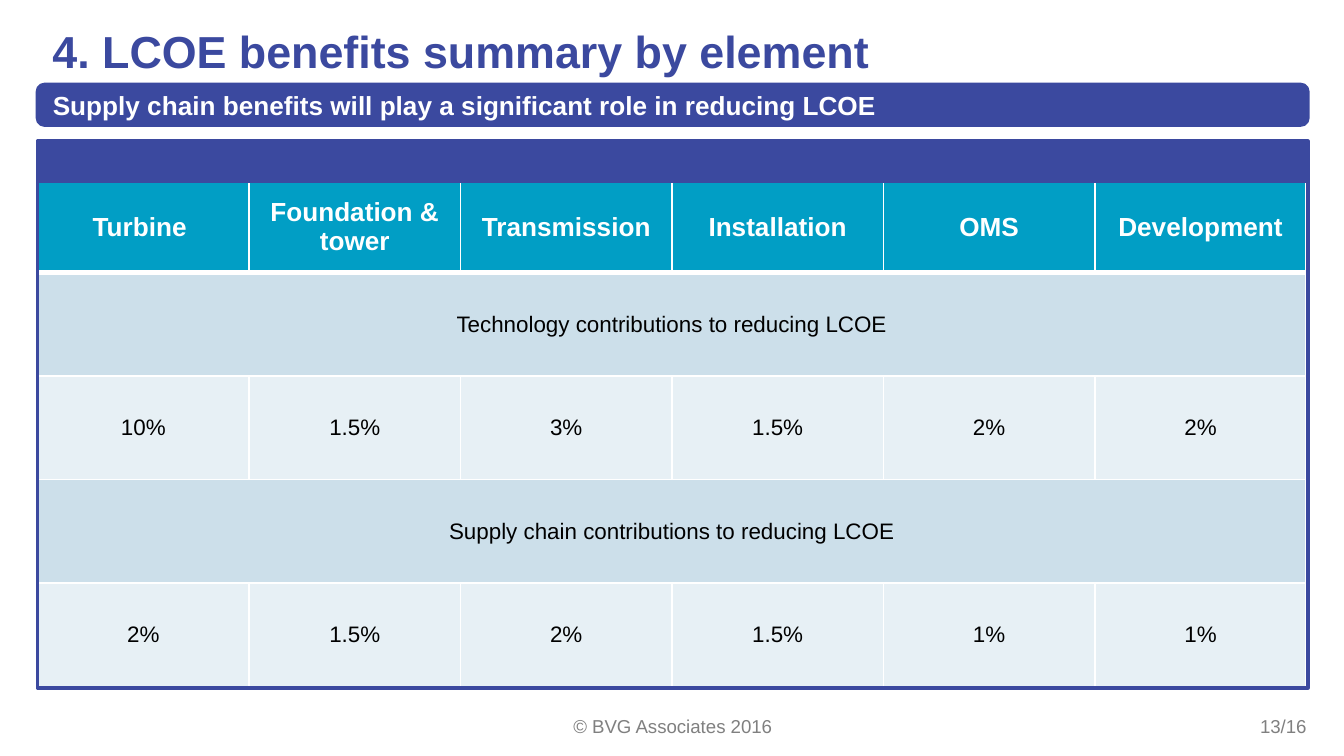
from lxml import etree
from pptx import Presentation
from pptx import util as u
from pptx.dml.color import RGBColor
from pptx.enum import shapes, text
from pptx.oxml.ns import qn

# Content
TITLE = "4. LCOE benefits summary by element"
MESSAGE = "Supply chain benefits will play a significant role in reducing LCOE"
ELEMENTS = ["Turbine ", "Foundation & tower", "Transmission", "Installation", "OMS", "Development"]
CONTRIBUTIONS = [
    ("Technology contributions to reducing LCOE", ["10%", "1.5%", "3%", "1.5%", "2%", "2%"]),
    ("Supply chain contributions to reducing LCOE", ["2%", "1.5%", "2%", "1.5%", "1%", "1%"]),
]
COPYRIGHT = "© BVG Associates 2016"
PAGE_NUMBER = "13/16"

COLOURS = {"navy": "3B499F", "teal": "019EC5", "band": "CCDFEA", "pale": "E7F0F5",
           "white": "FFFFFF", "black": "000000", "grey": "808080"}
FONT = "Arial"
LEFT, WIDTH = 0.28, 9.45
TABLE_TOP, TABLE_WIDTH = 1.35, 9.44
HEADER_HEIGHT, ROW_HEIGHT = 0.68, 0.77
BAR_HEIGHT = 0.3


def colour(name):
    return RGBColor.from_string(COLOURS[name])


def write(frame, words, size=12, ink="black", bold=False,
          align=text.PP_ALIGN.LEFT, anchor=text.MSO_ANCHOR.MIDDLE):
    frame.word_wrap = True
    frame.vertical_anchor = anchor
    paragraph = frame.paragraphs[0]
    paragraph.alignment = align
    run = paragraph.add_run()
    run.text = words
    run.font.name, run.font.size, run.font.bold = FONT, u.Pt(size), bold
    run.font.color.rgb = colour(ink)


def add_box(slide, preset, top, height, fill=None):
    shape = slide.shapes.add_shape(preset, u.Inches(LEFT), u.Inches(top),
                                   u.Inches(WIDTH), u.Inches(height))
    shape.shadow.inherit = False
    if fill:
        shape.fill.solid()
        shape.fill.fore_color.rgb = colour(fill)
    else:
        shape.fill.background()
    shape.line.color.rgb = colour("navy")
    shape.line.width = u.Pt(2)
    return shape


def add_label(slide, words, left, width, align):
    box = slide.shapes.add_textbox(u.Inches(left), u.Inches(5.25), u.Inches(width), u.Inches(0.3))
    write(box.text_frame, words, size=10, ink="grey", align=align)


def style_cell(cell, fill, bottom=1):
    properties = cell._tc.get_or_add_tcPr()
    for side, points in (("L", 1), ("R", 1), ("T", 1), ("B", bottom)):
        line = etree.SubElement(properties, qn(f"a:ln{side}"), w=str(u.Pt(points)))
        solid = etree.SubElement(line, qn("a:solidFill"))
        etree.SubElement(solid, qn("a:srgbClr"), val=COLOURS["white"])
    cell.fill.solid()
    cell.fill.fore_color.rgb = colour(fill)
    cell.vertical_anchor = text.MSO_ANCHOR.MIDDLE


def add_benefits_table(slide):
    rows = [(ELEMENTS, "teal")]
    for heading, values in CONTRIBUTIONS:
        rows += [([heading], "band"), (values, "pale")]
    height = HEADER_HEIGHT + ROW_HEIGHT * (len(rows) - 1)
    table = slide.shapes.add_table(len(rows), len(ELEMENTS), u.Inches(LEFT), u.Inches(TABLE_TOP),
                                   u.Inches(TABLE_WIDTH), u.Inches(height)).table
    for index, (entries, fill) in enumerate(rows):
        header = index == 0
        table.rows[index].height = u.Inches(HEADER_HEIGHT if header else ROW_HEIGHT)
        cells = list(table.rows[index].cells)
        for cell in cells:
            style_cell(cell, fill, bottom=3 if header else 1)
        if len(entries) == 1:
            cells[0].merge(cells[-1])
        for cell, entry in zip(cells, entries):
            write(cell.text_frame, entry, size=14 if header else 12,
                  ink="white" if header else "black", bold=header,
                  align=text.PP_ALIGN.CENTER)


def main():
    presentation = Presentation()
    # Widescreen, 16:9
    presentation.slide_width = u.Inches(10)
    presentation.slide_height = presentation.slide_width * 9 // 16
    slide = presentation.slides.add_slide(presentation.slide_layouts[5])

    # Benefits table
    add_benefits_table(slide)

    # Title
    title = slide.shapes.title
    title.left, title.top, title.width, title.height = map(u.Inches, (0.2, 0.13, 9.69, 0.35))
    title.text_frame.auto_size = text.MSO_AUTO_SIZE.NONE
    title.text_frame.margin_left = u.Inches(0.19)
    title.text_frame.margin_top = u.Inches(0.05)
    write(title.text_frame, TITLE, size=24, ink="navy", bold=True, anchor=text.MSO_ANCHOR.TOP)

    # Message bar, table frame and table cap
    message = add_box(slide, shapes.MSO_SHAPE.ROUNDED_RECTANGLE, 0.63, BAR_HEIGHT, "navy")
    write(message.text_frame, MESSAGE, size=14, ink="white", bold=True)
    add_box(slide, shapes.MSO_SHAPE.RECTANGLE, TABLE_TOP, 3.77)
    add_box(slide, shapes.MSO_SHAPE.RECTANGLE, TABLE_TOP - BAR_HEIGHT, BAR_HEIGHT, "navy")

    # Footer
    add_label(slide, COPYRIGHT, 3.42, 3.17, text.PP_ALIGN.CENTER)
    add_label(slide, PAGE_NUMBER, 9.22, 0.6, text.PP_ALIGN.RIGHT)

    presentation.save("out.pptx")


if __name__ == "__main__":
    main()
